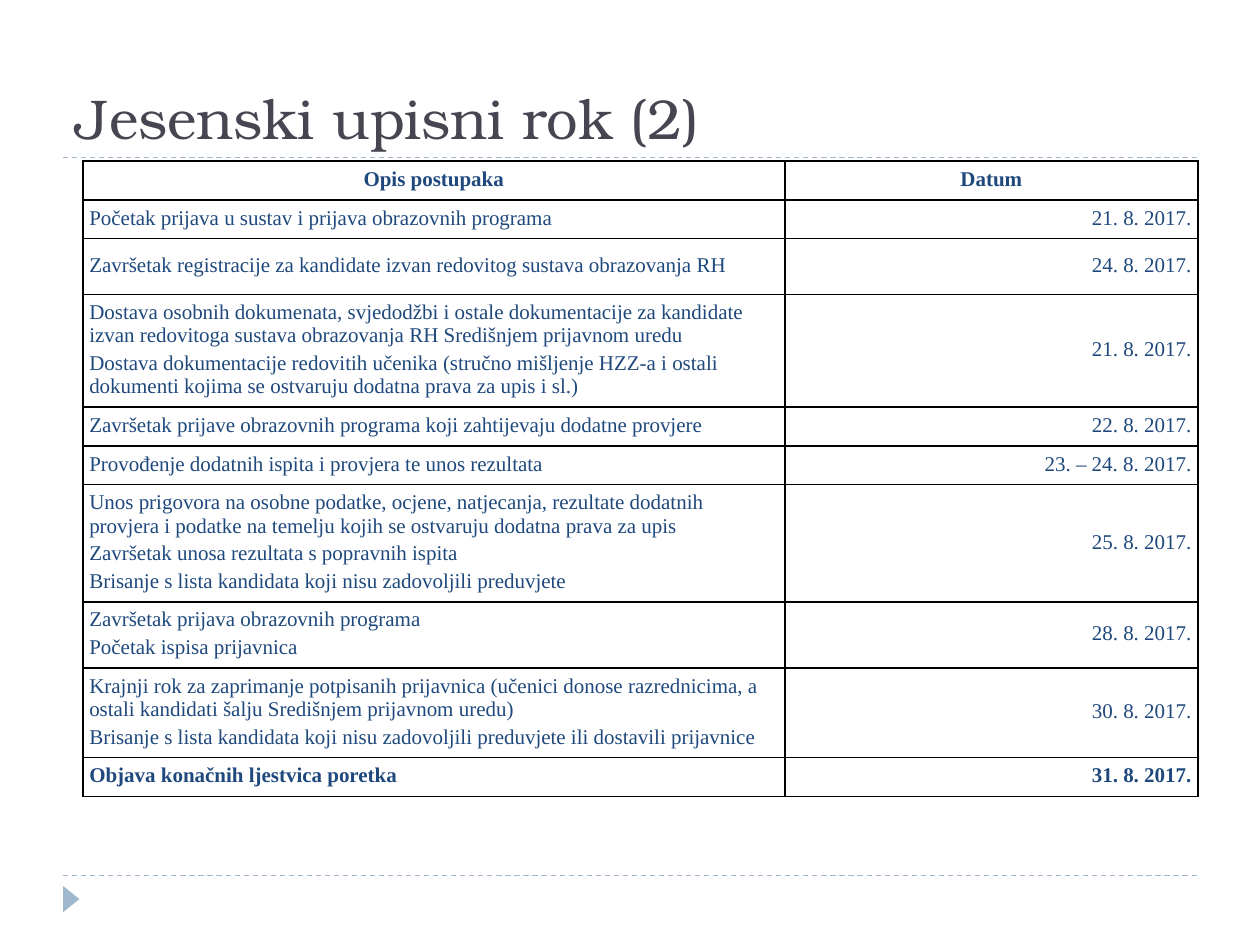
from dataclasses import dataclass

from lxml.etree import SubElement
from pptx import Presentation
from pptx.dml.color import RGBColor
from pptx.enum.dml import MSO_LINE_DASH_STYLE as Dash
from pptx.enum.shapes import MSO_CONNECTOR as Connector, MSO_SHAPE as Shape
from pptx.enum.text import MSO_ANCHOR as Anchor, MSO_AUTO_SIZE as AutoSize, PP_ALIGN as Align
from pptx.oxml.ns import qn
from pptx.util import Cm, Pt


@dataclass(frozen=True)
class Theme:
    title_color: str = "464653"
    text_color: str = "1F497D"
    accent: str = "9FB8CD"
    border: str = "000000"
    title_font: str = "TeX Gyre Bonum"
    body_font: str = "Times New Roman"
    title_size: float = 32
    body_size: float = 12
    para_gap: float = 2.4
    rule_width: float = 0.75
    border_width: float = 1


THEME = Theme()
TITLE = "Jesenski upisni rok (2)"
HEADER = (0.64, ["Opis postupaka"], "Datum")
STEPS = [
    (0.71, ["Početak prijava u sustav i prijava obrazovnih programa"], "21. 8. 2017."),
    (1.12, ["Završetak registracije za kandidate izvan redovitog sustava obrazovanja RH"],
     "24. 8. 2017."),
    (1.98, ["Dostava osobnih dokumenata, svjedodžbi i ostale dokumentacije za kandidate "
            "izvan redovitoga sustava obrazovanja RH Središnjem prijavnom uredu",
            "Dostava dokumentacije redovitih učenika (stručno mišljenje HZZ-a i ostali "
            "dokumenti kojima se ostvaruju dodatna prava za upis i sl.)"], "21. 8. 2017."),
    (0.71, ["Završetak prijave obrazovnih programa koji zahtijevaju dodatne provjere"],
     "22. 8. 2017."),
    (0.71, ["Provođenje dodatnih ispita i provjera te unos rezultata"], "23. – 24. 8. 2017."),
    (2.03, ["Unos prigovora na osobne podatke, ocjene, natjecanja, rezultate dodatnih "
            "provjera i podatke na temelju kojih se ostvaruju dodatna prava za upis",
            "Završetak unosa rezultata s popravnih ispita",
            "Brisanje s lista kandidata koji nisu zadovoljili preduvjete"], "25. 8. 2017."),
    (1.17, ["Završetak prijava obrazovnih programa", "Početak ispisa prijavnica"],
     "28. 8. 2017."),
    (1.57, ["Krajnji rok za zaprimanje potpisanih prijavnica (učenici donose razrednicima, a "
            "ostali kandidati šalju Središnjem prijavnom uredu)",
            "Brisanje s lista kandidata koji nisu zadovoljili preduvjete ili dostavili "
            "prijavnice"], "30. 8. 2017."),
]
FINAL = (0.64, ["Objava konačnih ljestvica poretka"], "31. 8. 2017.")

MARGIN, CONTENT_WIDTH = 1.27, 22.86
RULE_TOPS = (3.18, 17.65)
TABLE_LEFT, TABLE_TOP = 1.67, 3.25
COLUMN_WIDTHS = (14.15, 8.33)


def style_font(font, name, size, color, bold=False):
    font.name, font.size, font.bold = name, Pt(size), bold
    font.color.rgb = RGBColor.from_string(color)


def add_title(slide):
    title = slide.shapes.title
    title.left, title.top = Cm(MARGIN), Cm(0.43)
    title.width, title.height = Cm(CONTENT_WIDTH), Cm(2.74)
    frame = title.text_frame
    frame.text = TITLE
    frame.auto_size = AutoSize.NONE
    frame.vertical_anchor = Anchor.BOTTOM
    para = frame.paragraphs[0]
    para.alignment = Align.LEFT
    style_font(para.runs[0].font, THEME.title_font, THEME.title_size, THEME.title_color)


def add_rule(slide, top):
    rule = slide.shapes.add_connector(
        Connector.STRAIGHT, Cm(MARGIN), Cm(top), Cm(MARGIN + CONTENT_WIDTH), Cm(top))
    rule.line.color.rgb = RGBColor.from_string(THEME.accent)
    rule.line.width = Pt(THEME.rule_width)
    rule.line.dash_style = Dash.DASH
    SubElement(rule._element.spPr, qn("a:effectLst"))


def add_marker(slide):
    marker = slide.shapes.add_shape(
        Shape.ISOSCELES_TRIANGLE, Cm(1.17), Cm(17.96), Cm(0.53), Cm(0.33))
    marker.rotation = 90
    marker.shadow.inherit = False
    marker.fill.solid()
    marker.fill.fore_color.rgb = RGBColor.from_string(THEME.accent)
    marker.line.fill.background()


def add_borders(cell):
    properties = cell._tc.get_or_add_tcPr()
    for side in ("a:lnL", "a:lnR", "a:lnT", "a:lnB"):
        line = SubElement(properties, qn(side), w=str(Pt(THEME.border_width)))
        fill = SubElement(line, qn("a:solidFill"))
        SubElement(fill, qn("a:srgbClr"), val=THEME.border)


def fill_cell(cell, lines, align, bold, gap):
    cell.margin_left = cell.margin_right = cell.margin_top = Cm(0.13)
    cell.margin_bottom = Cm(0.18)
    cell.vertical_anchor = Anchor.MIDDLE
    add_borders(cell)
    cell.fill.background()
    cell.text_frame.text = "\n".join(lines)
    for para in cell.text_frame.paragraphs:
        para.alignment = align
        para.space_after = Pt(gap)
        style_font(para.runs[0].font, THEME.body_font, THEME.body_size,
                   THEME.text_color, bold)


def add_schedule(slide):
    rows = [HEADER, *STEPS, FINAL]
    table = slide.shapes.add_table(
        len(rows), len(COLUMN_WIDTHS), Cm(TABLE_LEFT), Cm(TABLE_TOP),
        Cm(sum(COLUMN_WIDTHS)), Cm(sum(row[0] for row in rows))).table
    table.first_row = table.horz_banding = False
    for column, width in zip(table.columns, COLUMN_WIDTHS):
        column.width = Cm(width)
    for index, row in enumerate(rows):
        height, lines, date = row
        table.rows[index].height = Cm(height)
        aligns = (Align.CENTER, Align.CENTER) if row is HEADER else (Align.LEFT, Align.RIGHT)
        bold = row in (HEADER, FINAL)
        gap = THEME.para_gap if len(lines) > 1 else 0
        for column, (texts, align) in enumerate(zip((lines, [date]), aligns)):
            fill_cell(table.cell(index, column), texts, align, bold, gap)


def main():
    deck = Presentation()
    deck.slide_width, deck.slide_height = Cm(25.4), Cm(19.05)
    slide = deck.slides.add_slide(deck.slide_layouts[5])
    for top in RULE_TOPS:
        add_rule(slide, top)
    add_marker(slide)
    add_title(slide)
    add_schedule(slide)
    deck.save("out.pptx")


if __name__ == "__main__":
    main()
